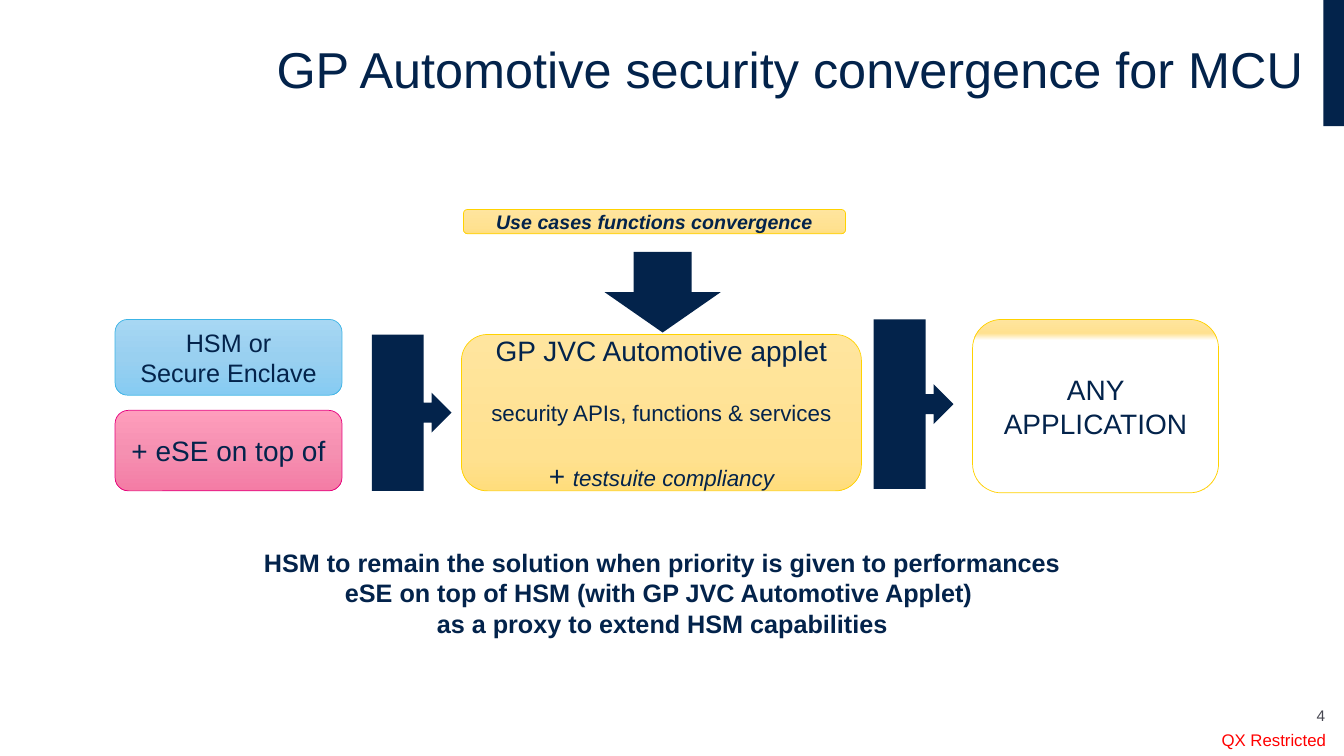
from dataclasses import dataclass

from lxml.etree import SubElement
from pptx import Presentation
from pptx.dml.color import RGBColor
from pptx.enum.shapes import MSO_SHAPE as SHAPE
from pptx.enum.text import MSO_ANCHOR as ANCHOR, PP_ALIGN as ALIGN
from pptx.oxml.ns import qn
from pptx.util import Cm, Pt


@dataclass(frozen=True)
class Theme:
    """Colours, gradients (position, colour) and type sizes of the slide."""
    font: str = "Arial"
    navy: str = "03234B"
    grey: str = "464650"
    red: str = "FF0000"
    sky_line: str = "3CB4E6"
    pink_line: str = "E6007E"
    gold_line: str = "FFD200"
    sky: tuple = ((0, "A7D7F3"), (50, "99D0F0"), (100, "86CBF2"))
    pink: tuple = ((0, "FE9DBC"), (50, "F590B1"), (100, "F47CA5"))
    gold: tuple = ((0, "FFE59E"), (78, "FFE190"), (100, "FFDD7C"))
    gold_fade: tuple = ((0, "FFE59E"), (8, "FFE190"), (12, "FFFFFF"))
    title: int = 36
    large: int = 20
    body: int = 18
    detail: int = 16
    label: int = 14
    footer: int = 12
    number: int = 11


THEME = Theme()


def add_run(p, text, size, color=THEME.navy, bold=False, italic=False):
    """Add text to a paragraph, turning each newline into a line break."""
    for i, line in enumerate(text.split("\n")):
        if i:
            p.add_line_break()
        r = p.add_run()
        r.text = line
        r.font.name, r.font.size = THEME.font, Pt(size)
        r.font.bold, r.font.italic = bold, italic
        r.font.color.rgb = RGBColor.from_string(color)


def write(tf, paragraphs, align=ALIGN.CENTER, anchor=ANCHOR.MIDDLE, gap=0):
    """Fill a text frame from paragraphs, each a list of run dictionaries."""
    tf.word_wrap = True
    tf.vertical_anchor = anchor
    for i, runs in enumerate(paragraphs):
        p = tf.add_paragraph() if i else tf.paragraphs[0]
        p.alignment = align
        if i and gap:
            p.space_before = Pt(gap)
        for run in runs:
            add_run(p, **run)


def add_text(s, box, paragraphs, margins=None, **layout):
    """Add a text box, with optional side and top margins in centimetres."""
    tf = s.shapes.add_textbox(*map(Cm, box)).text_frame
    if margins:
        tf.margin_left = tf.margin_right = Cm(margins[0])
        tf.margin_top = tf.margin_bottom = Cm(margins[1])
    write(tf, paragraphs, **layout)
    return tf


def add_solid(s, kind, box):
    """Add a plain navy shape."""
    sp = s.shapes.add_shape(kind, *map(Cm, box))
    sp.shadow.inherit = False
    sp.fill.solid()
    sp.fill.fore_color.rgb = RGBColor.from_string(THEME.navy)
    sp.line.fill.background()
    return sp


def set_gradient(sp, stops):
    """Fill a shape with a gradient from top to bottom."""
    sp.fill.gradient()
    grad = sp._element.spPr.find(qn("a:gradFill"))
    for child in list(grad):
        grad.remove(child)
    stop_list = SubElement(grad, qn("a:gsLst"))
    for position, color in stops:
        stop = SubElement(stop_list, qn("a:gs"), pos=str(position * 1000))
        SubElement(stop, qn("a:srgbClr"), val=color)
    SubElement(grad, qn("a:lin"), ang="5400000", scaled="0")


def add_card(s, box, stops, line, paragraphs, gap=0):
    """Add a rounded gradient card with centred text."""
    sp = s.shapes.add_shape(SHAPE.ROUNDED_RECTANGLE, *map(Cm, box))
    sp.shadow.inherit = False
    set_gradient(sp, stops)
    sp.line.color.rgb = RGBColor.from_string(line)
    sp.line.width = Pt(0.5)
    write(sp.text_frame, paragraphs, gap=gap)


def add_frame(s):
    """Add the title, corner bar, slide number and restriction notice."""
    t = THEME
    add_solid(s, SHAPE.RECTANGLE, (33.35, 0, 0.52, 3.18))
    title = [[dict(text="GP Automotive security convergence for MCU", size=t.title)]]
    tf = add_text(s, (0.84, 0, 32.26, 3.63), title, align=ALIGN.RIGHT)
    tf.paragraphs[0].line_spacing = 0.9
    add_text(s, (32.26, 17.58, 1.14, 0.81),
             [[dict(text="4", size=t.number, color=t.grey)]],
             margins=(0, 0.13), align=ALIGN.RIGHT, anchor=ANCHOR.BOTTOM)
    add_text(s, (29.97, 18.26, 3.45, 0.79),
             [[dict(text="QX Restricted", size=t.footer, color=t.red)]],
             margins=(0, 0), align=ALIGN.RIGHT)


def add_flow(s):
    """Add the cards and the arrows that lead from one to the next."""
    t = THEME
    add_card(s, (2.9, 8.05, 5.72, 1.91), t.sky, t.sky_line,
             [[dict(text="HSM or\nSecure Enclave", size=t.body)]])
    add_card(s, (2.9, 10.34, 5.72, 2.03), t.pink, t.pink_line,
             [[dict(text="+ eSE on top of", size=t.large)]])
    add_solid(s, SHAPE.RIGHT_ARROW_CALLOUT, (9.37, 8.43, 2.01, 3.94))
    add_solid(s, SHAPE.RIGHT_ARROW_CALLOUT, (22.02, 8.05, 2.01, 4.27))
    add_card(s, (11.63, 8.43, 10.08, 3.94), t.gold, t.gold_line,
             [[dict(text="GP JVC Automotive applet", size=t.large)],
              [dict(text="security APIs, functions & services", size=t.detail)],
              [dict(text="+ ", size=t.large),
               dict(text="testsuite compliancy", size=t.detail, italic=True)]],
             gap=23)
    add_card(s, (24.51, 8.05, 6.2, 4.37), t.gold_fade, t.gold_line,
             [[dict(text="ANY APPLICATION", size=t.large)]])
    add_solid(s, SHAPE.DOWN_ARROW, (15.24, 6.35, 2.92, 2.03))
    add_card(s, (11.68, 5.28, 9.63, 0.61), t.gold, t.gold_line,
             [[dict(text="Use cases functions convergence", size=t.label,
                    bold=True, italic=True)]])


def add_conclusion(s):
    """Add the bold statement below the flow."""
    lines = ("HSM to remain the solution when priority is given to performances",
             "eSE on top of HSM (with GP JVC Automotive Applet) \n"
             "as a proxy to extend HSM capabilities")
    add_text(s, (2.87, 13.67, 27.64, 2.57),
             [[dict(text=line, size=THEME.body, bold=True)] for line in lines],
             anchor=ANCHOR.TOP)


def main():
    """Build the slide and save it."""
    prs = Presentation()
    prs.slide_width, prs.slide_height = Cm(33.87), Cm(19.05)
    s = prs.slides.add_slide(prs.slide_layouts[6])
    add_frame(s)
    add_flow(s)
    add_conclusion(s)
    prs.save("out.pptx")


if __name__ == "__main__":
    main()
